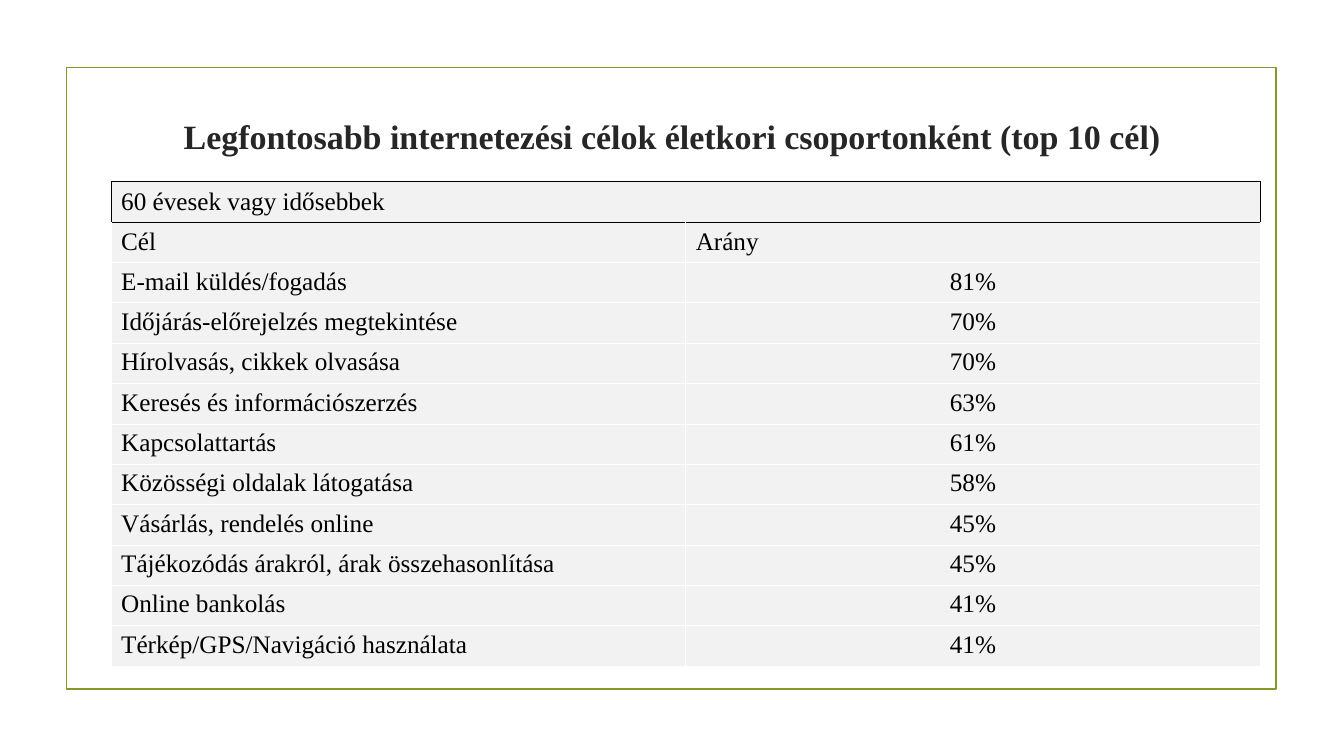
from lxml.etree import SubElement
from pptx import Presentation
from pptx.dml.color import RGBColor
from pptx.enum.shapes import MSO_SHAPE
from pptx.enum.text import MSO_ANCHOR, PP_ALIGN
from pptx.oxml.ns import qn
from pptx.util import Cm, Pt

COLORS = {"olive": "83992A", "title": "262626", "text": "000000",
          "cell": "F2F2F2", "grid": "FFFFFF", "edge": "000000"}
FONT = "Times New Roman"
GROUP = "60 évesek vagy idősebbek"
GOALS = [
    ("Cél", "Arány"),
    ("E-mail küldés/fogadás", "81%"),
    ("Időjárás-előrejelzés megtekintése", "70%"),
    ("Hírolvasás, cikkek olvasása", "70%"),
    ("Keresés és információszerzés", "63%"),
    ("Kapcsolattartás", "61%"),
    ("Közösségi oldalak látogatása", "58%"),
    ("Vásárlás, rendelés online", "45%"),
    ("Tájékozódás árakról, árak összehasonlítása", "45%"),
    ("Online bankolás", "41%"),
    ("Térkép/GPS/Navigáció használata", "41%"),
]


def color(name):
    return RGBColor.from_string(COLORS[name])


def write(frame, text, size, tint, align=PP_ALIGN.LEFT, bold=False):
    frame.text = text
    par = frame.paragraphs[0]
    par.alignment = align
    font = par.runs[0].font
    font.name, font.size, font.bold = FONT, Pt(size), bold
    font.color.rgb = color(tint)


def border(cell, sides):
    """Draw cell edges; sides maps L, R, T and B to colour names."""
    props = cell._tc.get_or_add_tcPr()
    for side in "LRTB":
        line = SubElement(props, qn(f"a:ln{side}"), w=str(Pt(0.6)))
        fill = SubElement(line, qn("a:solidFill"))
        SubElement(fill, qn("a:srgbClr"), val=COLORS[sides[side]])


def add_frame(slide, left, top, width, height):
    rect = slide.shapes.add_shape(MSO_SHAPE.RECTANGLE, Cm(left), Cm(top),
                                  Cm(width), Cm(height))
    rect.shadow.inherit = False
    rect.fill.background()
    rect.line.color.rgb = color("olive")
    rect.line.width = Pt(1.25)


def add_title(slide, left, top, width, height):
    frame = slide.shapes.add_textbox(Cm(left), Cm(top), Cm(width),
                                     Cm(height)).text_frame
    frame.word_wrap = True
    frame.vertical_anchor = MSO_ANCHOR.MIDDLE
    write(frame, "Legfontosabb internetezési célok életkori csoportonként (top 10 cél)",
          24.3, "title", PP_ALIGN.CENTER, True)


def add_goals(slide, left, top, width, height):
    rows = [(GROUP, "")] + GOALS
    table = slide.shapes.add_table(len(rows), 2, Cm(left), Cm(top),
                                   Cm(width), Cm(height)).table
    table.first_row = table.horz_banding = False
    table.cell(0, 0).merge(table.cell(0, 1))
    for r, row in enumerate(rows):
        table.rows[r].height = Cm(height / len(rows))
        for c, text in enumerate(row):
            cell = table.cell(r, c)
            sides = dict.fromkeys("LRTB", "edge" if r == 0 else "grid")
            if r == 1:
                sides["T"] = "edge"
            border(cell, sides)
            cell.fill.solid()
            cell.fill.fore_color.rgb = color("cell")
            if r < 2:
                cell.vertical_anchor = MSO_ANCHOR.MIDDLE
            if text:
                centred = c == 1 and r > 1
                write(cell.text_frame, text, 18, "text",
                      PP_ALIGN.CENTER if centred else PP_ALIGN.LEFT)


def add_page(deck, left, top, width, height):
    """Place frame, title and table inside the given box."""
    slide = deck.slides.add_slide(deck.slide_layouts[6])
    add_frame(slide, left, top, width, height)
    add_title(slide, left + 1.93, top + 1.02, 26.67, 1.42)
    add_goals(slide, left + 1.12, top + 2.88, 28.96, 12.12)


def main():
    deck = Presentation()
    deck.slide_width, deck.slide_height = Cm(33.87), Cm(19.05)
    add_page(deck, 1.68, 1.7, 30.48, 15.67)
    deck.save("out.pptx")


if __name__ == "__main__":
    main()
